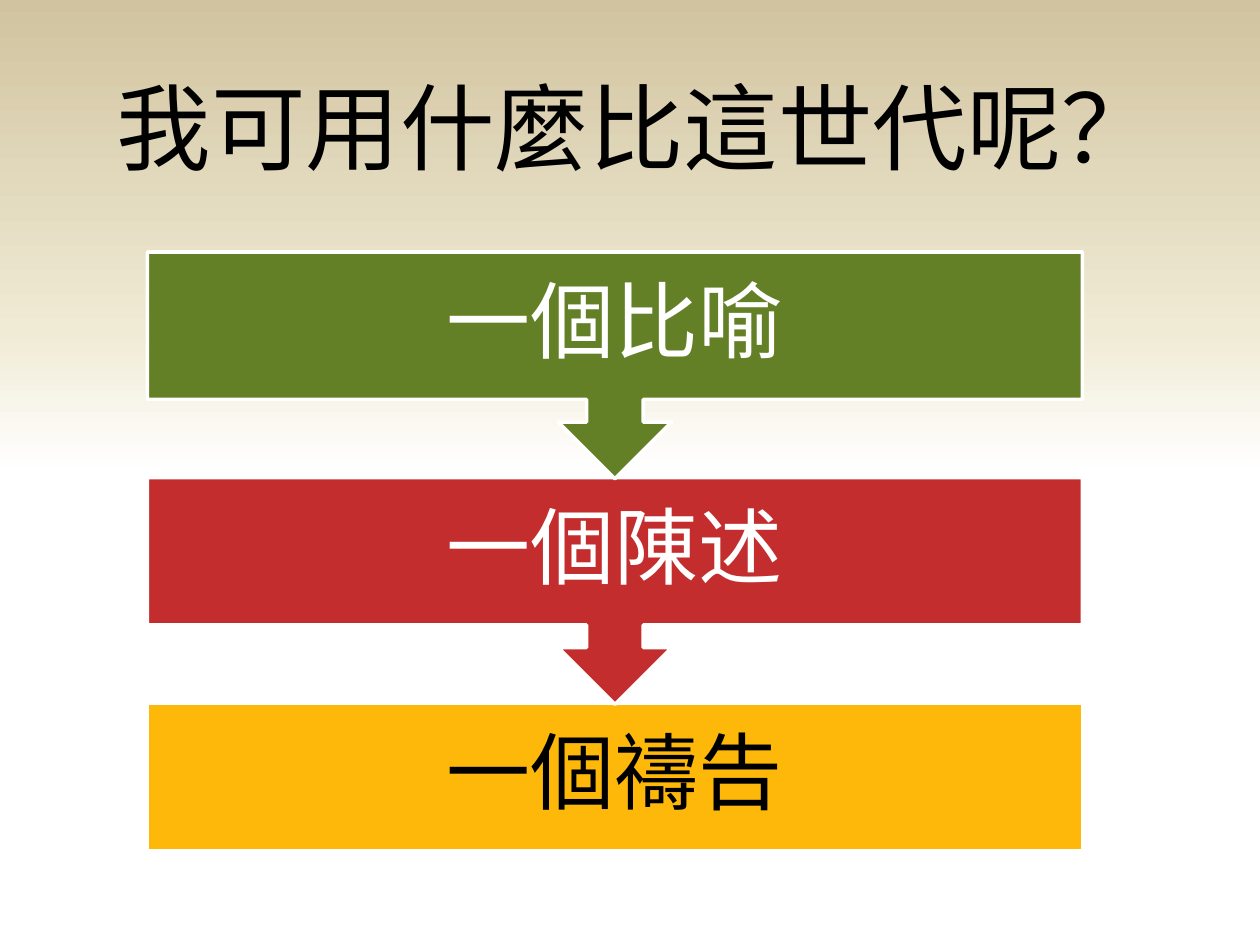
from pptx import Presentation
from pptx.dml.color import RGBColor
from pptx.enum.shapes import MSO_SHAPE
from pptx.enum.text import MSO_ANCHOR, MSO_AUTO_SIZE, PP_ALIGN
from pptx.oxml import parse_xml
from pptx.oxml.ns import nsdecls
from pptx.util import Inches, Pt

BLACK = RGBColor(0, 0, 0)
WHITE = RGBColor(255, 255, 255)
GREEN = RGBColor(0x63, 0x80, 0x26)
RED = RGBColor(0xC3, 0x2D, 0x2E)
GOLD = RGBColor(0xFE, 0xB8, 0x0A)
STOPS = [(50, WHITE), (65, RGBColor(0xF0, 0xEB, 0xD5)), (100, RGBColor(0xD1, 0xC3, 0x9F))]
STEPS = [("一個比喻", GREEN, WHITE), ("一個陳述", RED, WHITE), ("一個禱告", GOLD, BLACK)]


def add_back(slide):
    """Fill the background with a gradient that fades from the top."""
    stops = "".join(
        f'<a:gs pos="{pos * 1000}"><a:srgbClr val="{color}"/></a:gs>' for pos, color in STOPS
    )
    slide.element.cSld.insert(0, parse_xml(
        f'<p:bg {nsdecls("p", "a")}><p:bgPr><a:gradFill rotWithShape="1">'
        f'<a:gsLst>{stops}</a:gsLst><a:lin ang="16200000" scaled="0"/></a:gradFill>'
        "<a:effectLst/></p:bgPr></p:bg>"
    ))


def add_text(slide, box, text, size, color):
    """Place one line of text in a box and return its frame."""
    frame = slide.shapes.add_textbox(*map(Inches, box)).text_frame
    frame.text = text
    font = frame.paragraphs[0].runs[0].font
    font.name, font.size = "Calibri", Pt(size)
    font.color.rgb = color
    return frame


def add_title(slide, box):
    """Place the heading."""
    frame = add_text(slide, box, "我可用什麼比這世代呢？", 54, BLACK)
    frame.word_wrap = False
    frame.auto_size = MSO_AUTO_SIZE.SHAPE_TO_FIT_TEXT


def add_label(slide, box, text, color):
    """Centre a step's label in its bar."""
    frame = add_text(slide, box, text, 48, color)
    frame.word_wrap = True
    frame.vertical_anchor = MSO_ANCHOR.MIDDLE
    frame.margin_left = frame.margin_right = Inches(0.37)
    frame.margin_top = frame.margin_bottom = Inches(0.37)
    para = frame.paragraphs[0]
    para.alignment = PP_ALIGN.CENTER
    para.line_spacing = 0.9
    para.space_after = Pt(17)


def add_flow(slide, box):
    """Stack the steps from the last up, each arrow over the next bar."""
    left, top, width, height = box
    bar, call = 1.17, 1.8
    last = len(STEPS) - 1
    pitch = (height - bar) / last
    for i, (text, fill, color) in reversed(list(enumerate(STEPS))):
        y = top + i * pitch
        kind = MSO_SHAPE.RECTANGLE if i == last else MSO_SHAPE.UP_ARROW_CALLOUT
        tall = bar if i == last else call
        shape = slide.shapes.add_shape(kind, *map(Inches, (left, y, width, tall)))
        shape.rotation = 0 if i == last else 180
        shape.shadow.inherit = False
        shape.fill.solid()
        shape.fill.fore_color.rgb = fill
        shape.line.color.rgb = WHITE
        shape.line.width = Pt(2)
        add_label(slide, (left, y, width, bar), text, color)


def main():
    """Build and save the slide."""
    deck = Presentation()
    deck.slide_width, deck.slide_height = Inches(10), Inches(7.5)
    slide = deck.slides.add_slide(deck.slide_layouts[6])
    add_back(slide)
    add_flow(slide, (1.17, 2, 7.42, 4.75))
    add_title(slide, (0.83, 0.5, 8.53, 1.01))
    deck.save("out.pptx")


if __name__ == "__main__":
    main()
